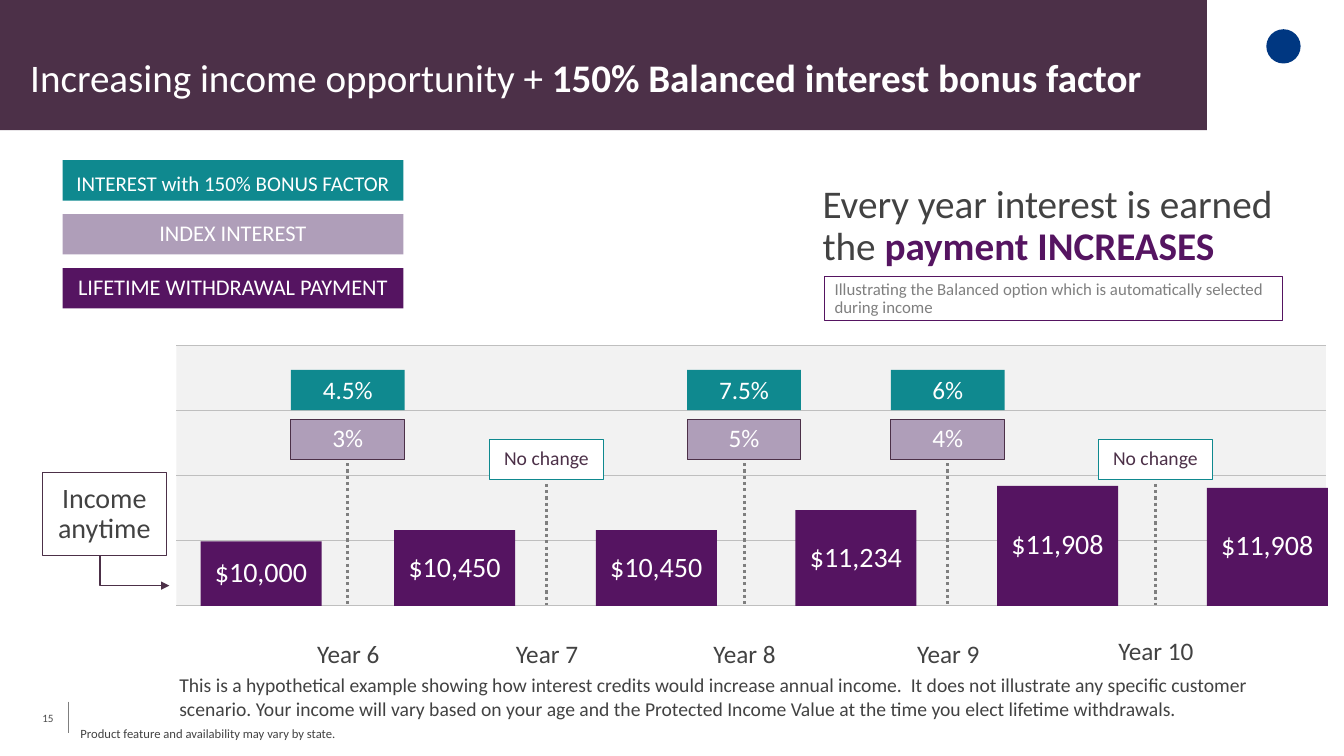
from lxml import etree
from pptx import Presentation
from pptx.dml.color import RGBColor
from pptx.enum import dml, shapes, text
from pptx.oxml import ns
from pptx.util import Inches, Pt

COLORS = {
    "plum": "4C3048", "purple": "551461", "lilac": "AF9EB9", "teal": "0F898F",
    "ink": "424242", "number": "4D4D4D", "gray": "7F7F7F", "grid": "BFBFBF",
    "panel": "F2F2F2", "white": "FFFFFF", "emblem": "003781",
}
FONT = "Calibri"
CENTER, LEFT = text.PP_ALIGN.CENTER, text.PP_ALIGN.LEFT
TOP, MIDDLE, BOTTOM = text.MSO_ANCHOR.TOP, text.MSO_ANCHOR.MIDDLE, text.MSO_ANCHOR.BOTTOM

# left, height and amount of each payment bar
PAYMENTS = [
    (1.99, 0.64, "$10,000"), (3.91, 0.75, "$10,450"), (5.91, 0.75, "$10,450"),
    (7.89, 0.95, "$11,234"), (9.89, 1.19, "$11,908"), (11.97, 1.17, "$11,908"),
]
# centre, label, index interest and interest with bonus (None: no change)
YEARS = [
    (3.45, "Year 6", "3%", "4.5%"), (5.42, "Year 7", None, None),
    (7.38, "Year 8", "5%", "7.5%"), (9.4, "Year 9", "4%", "6%"),
    (11.46, "Year 10", None, None),
]


def rgb(name):
    return RGBColor.from_string(COLORS[name])


def write(shape, runs, size, color="ink", align=LEFT, anchor=TOP, spacing=0.9,
          insets=(0.1, 0.05, 0.1, 0.05)):
    """Fill a shape with one paragraph; each run is (words, bold, color or None)."""
    frame = shape.text_frame
    frame.word_wrap = True
    frame.auto_size = text.MSO_AUTO_SIZE.NONE
    frame.vertical_anchor = anchor
    frame.margin_left, frame.margin_top, frame.margin_right, frame.margin_bottom = map(Inches, insets)
    paragraph = frame.paragraphs[0]
    paragraph.alignment = align
    paragraph.line_spacing = spacing
    paragraph.space_before = Pt(0)
    for words, bold, own_color in runs:
        run = paragraph.add_run()
        run.text = words
        run.font.name = FONT
        run.font.size = Pt(size)
        run.font.bold = bold
        run.font.color.rgb = rgb(own_color or color)


def add_box(slide, box, fill=None, border=None, kind=shapes.MSO_SHAPE.RECTANGLE):
    shape = slide.shapes.add_shape(kind, *map(Inches, box))
    shape.shadow.inherit = False
    if fill:
        shape.fill.solid()
        shape.fill.fore_color.rgb = rgb(fill)
    else:
        shape.fill.background()
    if border:
        shape.line.color.rgb = rgb(border)
        shape.line.width = Pt(0.75)
    else:
        shape.line.fill.background()
    return shape


def add_label(slide, box, words, size, fill=None, border=None, color="white", anchor=MIDDLE):
    """Add a rectangle with centred text."""
    write(add_box(slide, box, fill, border), [(words, False, None)], size, color, CENTER, anchor)


def add_text(slide, box, runs, size, **style):
    write(slide.shapes.add_textbox(*map(Inches, box)), runs, size, **style)


def add_line(slide, start, end, color, width, kind=shapes.MSO_CONNECTOR.STRAIGHT):
    line = slide.shapes.add_connector(kind, *map(Inches, start + end))
    line.line.color.rgb = rgb(color)
    line.line.width = Pt(width)
    etree.SubElement(line.element.spPr, ns.qn("a:effectLst"))
    return line


def add_header(slide, box):
    left, top, width, height = box
    title = slide.shapes.title
    title.left, title.top, title.width, title.height = map(Inches, box)
    title.fill.solid()
    title.fill.fore_color.rgb = rgb("plum")
    write(title, [("Increasing income opportunity + ", False, None),
                  ("150% Balanced interest bonus factor", True, None)],
          27.9, "white", anchor=BOTTOM, spacing=0.8, insets=(0.3,) * 4)
    add_box(slide, (left + width + 0.59, top + 0.29, 0.34, 0.34), "emblem",
            kind=shapes.MSO_SHAPE.OVAL)


def add_legend(slide, box):
    left, top, width, height = box
    entries = [("INTEREST with 150% BONUS FACTOR", 15, "teal", BOTTOM),
               ("INDEX INTEREST", 16, "lilac", MIDDLE),
               ("LIFETIME WITHDRAWAL PAYMENT", 16, "purple", MIDDLE)]
    key_height = 0.4
    step = (height - key_height) / (len(entries) - 1)
    for row, (words, size, fill, anchor) in enumerate(entries):
        add_label(slide, (left, top + row * step, width, key_height), words, size, fill, anchor=anchor)


def add_message(slide, box):
    left, top, width, height = box
    add_text(slide, (left, top, width, 1.28),
             [("Every year interest is earned the ", False, None),
              ("payment INCREASES", True, "purple")], 28)
    note = add_box(slide, (left + 0.12, top + height - 0.44, 4.54, 0.44), border="purple")
    write(note, [("Illustrating the Balanced option which is automatically selected during income",
                  False, None)], 12, "gray")


def add_grid(slide, box):
    left, top, width, height = box
    add_box(slide, box, "panel")
    bands = 4
    for band in range(bands + 1):
        y = top + band * height / bands
        add_line(slide, (left, y), (left + width, y), "grid", 1)


def add_year(slide, top, base, center, label, index, bonus):
    tag_width, tag_height = 1.13, 0.4
    tag_left = center - tag_width / 2
    index_top = top + 0.73
    change_top = top + 0.93
    dots_top = index_top if index else change_top + 0.44
    dots = add_line(slide, (center, dots_top), (center, base - 0.01), "gray", 2.25)
    dots.line.dash_style = dml.MSO_LINE.ROUND_DOT
    if index:
        add_label(slide, (tag_left, index_top, tag_width, tag_height), index, 18, "lilac", "plum")
        add_label(slide, (tag_left, top + 0.24, tag_width, tag_height), bonus, 18, "teal", anchor=BOTTOM)
    else:
        add_label(slide, (tag_left, change_top, tag_width, tag_height), "No change", 14,
                  "white", "teal", "plum")
    label_top = base + (0.28 if label == "Year 10" else 0.31)
    add_text(slide, (center - 0.53, label_top, 1.07, 0.32), [(label, False, None)], 18, align=CENTER)


def add_income_chart(slide, box):
    left, top, width, height = box
    base = top + height
    add_grid(slide, box)
    for bar_left, bar_height, amount in PAYMENTS:
        add_label(slide, (bar_left, base - bar_height, 1.2, bar_height), amount, 20, "purple")
    for year in YEARS:
        add_year(slide, top, base, *year)


def add_income_callout(slide, box):
    left, top, width, height = box
    add_label(slide, box, "Income anytime", 20, border="plum", color="ink")
    # An elbow turned a quarter: it leaves the box downwards and ends to the right.
    drop, reach = 0.3, 0.69
    middle_x, middle_y = left + 0.57 + reach / 2, top + height + drop / 2
    arrow = add_line(slide, (middle_x + drop / 2, middle_y - reach / 2),
                     (middle_x - drop / 2, middle_y + reach / 2), "plum", 1,
                     shapes.MSO_CONNECTOR.ELBOW)
    properties = arrow.element.spPr
    properties.find(ns.qn("a:xfrm")).set("rot", "16200000")
    properties.find(ns.qn("a:prstGeom")).set("prst", "bentConnector2")
    etree.SubElement(properties.find(ns.qn("a:ln")), ns.qn("a:tailEnd"), type="triangle")


def add_footer(slide, box):
    left, top, width, height = box
    add_text(slide, (left + 1.26, top, 11.49, 0.58), [(
        "This is a hypothetical example showing how interest credits would increase annual income.  "
        "It does not illustrate any specific customer scenario. Your income will vary based on your age "
        "and the Protected Income Value at the time you elect lifetime withdrawals.", False, None)],
        14, spacing=1)
    add_text(slide, (left, top + 0.29, 0.4, 0.4), [("15", False, None)], 8, color="number",
             anchor=MIDDLE, spacing=1, insets=(0, 0.06, 0, 0.06))
    add_line(slide, (left + 0.26, top + 0.33), (left + 0.26, top + 0.64), "gray", 0.75)
    add_text(slide, (left + 0.28, top + 0.54, 3.4, 0.25),
             [("Product feature and availability may vary by state.", False, None)], 9)


def main():
    deck = Presentation()
    deck.slide_width, deck.slide_height = Inches(13.33), Inches(7.5)
    slide = deck.slides.add_slide(deck.slide_layouts[5])
    add_header(slide, (0, 0, 11.97, 1.29))
    add_legend(slide, (0.62, 1.59, 3.38, 1.47))
    add_message(slide, (8.06, 1.78, 4.77, 1.4))
    add_income_chart(slide, (1.75, 3.43, 11.4, 2.58))
    add_income_callout(slide, (0.42, 4.69, 1.23, 0.82))
    add_footer(slide, (0.42, 6.63, 12.75, 0.79))
    deck.save("out.pptx")


if __name__ == "__main__":
    main()
